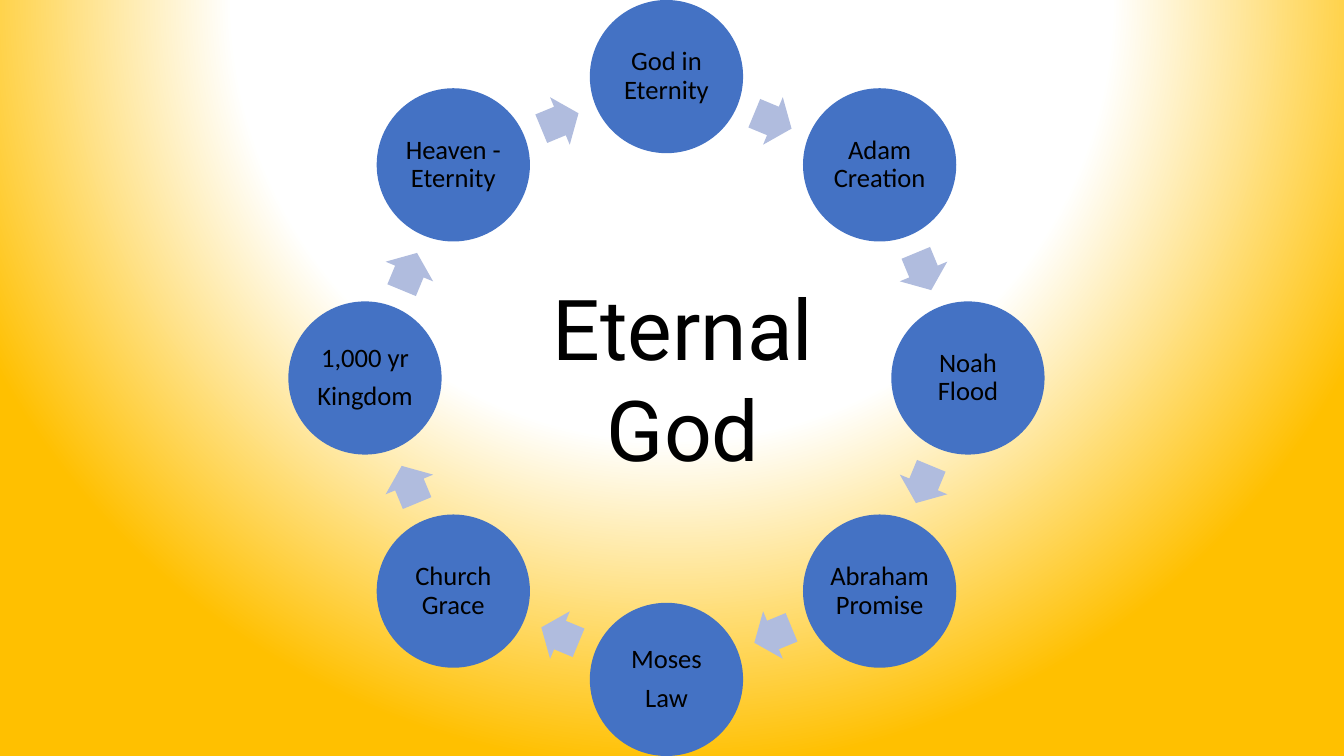
from dataclasses import dataclass
from math import cos, radians, sin

from pptx import Presentation
from pptx.dml.color import RGBColor
from pptx.enum.shapes import MSO_SHAPE
from pptx.enum.text import MSO_ANCHOR, MSO_AUTO_SIZE, PP_ALIGN
from pptx.oxml import parse_xml
from pptx.oxml.ns import nsdecls
from pptx.util import Inches, Pt

HEADING = "Eternal God"
# Clockwise from the top; each stage is a tuple of paragraphs.
STAGES = [
    ("God in Eternity",),
    ("Adam Creation",),
    ("Noah Flood",),
    ("Abraham Promise",),
    ("Moses", "Law"),
    ("Church Grace",),
    ("1,000 yr", "Kingdom"),
    ("Heaven - Eternity",),
]


@dataclass(frozen=True)
class Theme:
    stage_fill: str = "4472C4"
    arrow_fill: str = "B0BCDE"
    ink: str = "000000"
    glow: str = "FFFFFF"
    edge: str = "FFC000"
    stage_font: str = "Calibri"
    heading_font: str = "Roboto"
    stage_size: float = 19
    heading_size: float = 60


THEME = Theme()
RING_CENTER = (6.61, 3.75)
STAGE_RADIUS, ARROW_RADIUS = 2.99, 2.76
STAGE_SIZE = (1.52, 1.52)
ARROW_SIZE = (0.4, 0.51)
STEP = 360 / len(STAGES)


def paint_background(slide):
    """Fill the slide with a radial glow centred above its top edge."""
    slide.background.fill.gradient()
    linear = slide.element.xpath(".//p:bgPr/a:gradFill")[0]
    stops = [(0, THEME.glow), (57, THEME.glow), (100, THEME.edge)]
    stop_xml = "".join(
        f'<a:gs pos="{percent * 1000}"><a:srgbClr val="{color}"/></a:gs>'
        for percent, color in stops
    )
    radial = parse_xml(
        f'<a:gradFill {nsdecls("a")} rotWithShape="1"><a:gsLst>{stop_xml}</a:gsLst>'
        '<a:path path="circle">'
        '<a:fillToRect l="50000" t="-80000" r="50000" b="180000"/>'
        "</a:path></a:gradFill>"
    )
    linear.getparent().replace(linear, radial)


def add_run(paragraph, text, font_name, size):
    paragraph.alignment = PP_ALIGN.CENTER
    run = paragraph.add_run()
    run.text = text
    run.font.name = font_name
    run.font.size = Pt(size)
    run.font.color.rgb = RGBColor.from_string(THEME.ink)


def add_on_ring(slide, kind, angle, radius, size, fill):
    """Centre a shape on the ring, with the angle clockwise from the top."""
    width, height = size
    x = RING_CENTER[0] + radius * sin(radians(angle))
    y = RING_CENTER[1] - radius * cos(radians(angle))
    shape = slide.shapes.add_shape(
        kind, Inches(x - width / 2), Inches(y - height / 2), Inches(width), Inches(height)
    )
    shape.shadow.inherit = False
    shape.fill.solid()
    shape.fill.fore_color.rgb = RGBColor.from_string(fill)
    shape.line.fill.background()
    return shape


def add_stage(slide, lines, angle):
    stage = add_on_ring(
        slide, MSO_SHAPE.OVAL, angle, STAGE_RADIUS, STAGE_SIZE, THEME.stage_fill
    )
    frame = stage.text_frame
    frame.word_wrap = True
    frame.vertical_anchor = MSO_ANCHOR.MIDDLE
    frame.margin_left = frame.margin_right = Inches(0.03)
    frame.margin_top = frame.margin_bottom = Inches(0.03)
    for index, line in enumerate(lines):
        paragraph = frame.add_paragraph() if index else frame.paragraphs[0]
        paragraph.line_spacing = 0.9
        paragraph.space_after = Pt(THEME.stage_size * 0.35)
        add_run(paragraph, line, THEME.stage_font, THEME.stage_size)


def add_arrow(slide, angle):
    arrow = add_on_ring(
        slide, MSO_SHAPE.RIGHT_ARROW, angle, ARROW_RADIUS, ARROW_SIZE, THEME.arrow_fill
    )
    arrow.adjustments[0] = 0.6
    arrow.adjustments[1] = 0.5
    arrow.rotation = angle


def add_heading(slide):
    heading = slide.shapes.title
    heading.left, heading.top = Inches(5.26), Inches(2.69)
    heading.width, heading.height = Inches(3.03), Inches(2.12)
    frame = heading.text_frame
    frame.word_wrap = True
    frame.auto_size = MSO_AUTO_SIZE.SHAPE_TO_FIT_TEXT
    frame.vertical_anchor = MSO_ANCHOR.TOP
    add_run(frame.paragraphs[0], HEADING, THEME.heading_font, THEME.heading_size)


def main():
    deck = Presentation()
    deck.slide_width, deck.slide_height = Inches(13.33), Inches(7.5)
    slide = deck.slides.add_slide(deck.slide_layouts.get_by_name("Title Only"))
    paint_background(slide)
    add_heading(slide)
    for index, lines in enumerate(STAGES):
        add_stage(slide, lines, index * STEP)
        add_arrow(slide, (index + 0.5) * STEP)
    deck.save("out.pptx")


if __name__ == "__main__":
    main()
